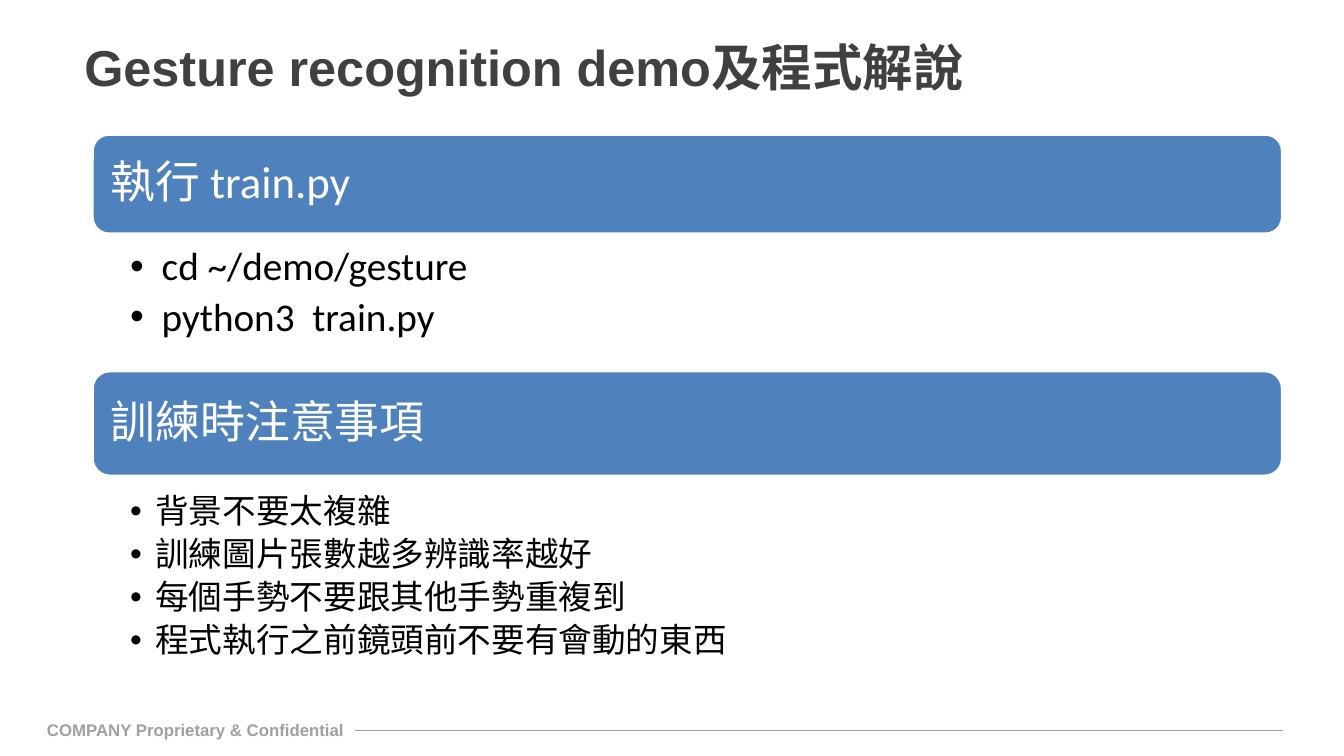
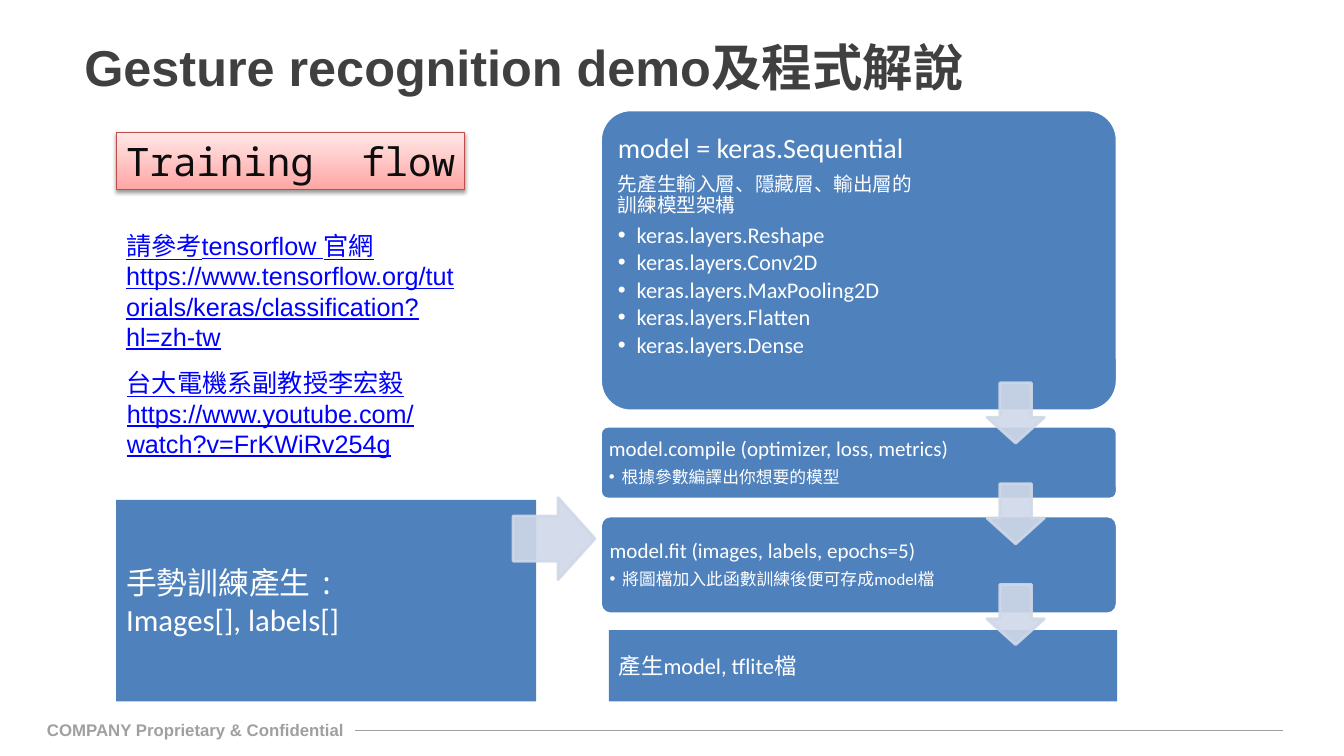
import pptx
import pptx.util
import pptx.dml.color
import pptx.enum.shapes
import pptx.enum.text
import pptx.oxml
import pptx.oxml.ns

Pt = pptx.util.Pt
SHAPE = pptx.enum.shapes.MSO_SHAPE
ANCHOR = pptx.enum.text.MSO_ANCHOR
ALIGN = pptx.enum.text.PP_ALIGN
NS = pptx.oxml.ns.nsdecls("a")

BLUE, PALE, WHITE, BLACK = "4F81BD", "D0D8E8", "FFFFFF", "000000"
GREY, DARK, LINK = "A0A0A0", "404040", "0000FF"
ARIAL, CALIBRI, MONO = "Arial", "Calibri", "Noto Sans Mono"

TITLE = "Gesture recognition demo及程式解說"
FOOTER = "COMPANY Proprietary & Confidential"

SECTIONS = [
    dict(head="執行 train.py", head_box=(66, 96, 850, 71), list_box=(66, 174, 850, 85),
         size=28, indent=22.5, items=["cd ~/demo/gesture", "python3  train.py"]),
    dict(head="訓練時注意事項", head_box=(66, 265, 850, 75), list_box=(66, 351, 850, 138),
         size=24, indent=18,
         items=["背景不要太複雜", "訓練圖片張數越多辨識率越好",
                "每個手勢不要跟其他手勢重複到", "程式執行之前鏡頭前不要有會動的東西"]),
]

LAYERS = ["Reshape", "Conv2D", "MaxPooling2D", "Flatten", "Dense"]
FLOW = [
    dict(top=78.5, height=215, insets=(6, 6, 130, 26), indent=13.5,
         heads=[("model = keras.Sequential", 20), ("先產生輸入層、隱藏層、輸出層的訓練模型架構", 14)],
         bullets=[("keras.layers." + name, 16) for name in LAYERS]),
    dict(top=304.5, height=52, insets=(4.5, 4, 4.5, 4), indent=9,
         heads=[("model.compile (optimizer, loss, metrics)", 15)],
         bullets=[("根據參數編譯出你想要的模型", 12)]),
    dict(top=368.5, height=70, insets=(4.5, 4, 4.5, 4), indent=9,
         heads=[("model.fit (images, labels, epochs=5)", 15)],
         bullets=[("將圖檔加入此函數訓練後便可存成model檔", 12)]),
]
PLAIN_BOXES = [
    ((83, 357, 300, 144), [("手勢訓練產生 :", 22, MONO), ("Images[], labels[]", 22, CALIBRI)]),
    ((435, 450, 363, 51), [("產生model, tflite檔", 16, CALIBRI)]),
]
ARROWS = [(SHAPE.DOWN_ARROW, (705, 273.5 + 72 * i, 41, 43)) for i in range(3)]
ARROWS.append((SHAPE.RIGHT_ARROW, (366.5, 355.5, 58.5, 58.5)))
LINKS = [
    ((83, 161, 249, 94),
     "請參考tensorflow 官網https://www.tensorflow.org/tutorials/keras/classification?hl=zh-tw"),
    ((83.5, 259, 238.5, 73), "台大電機系副教授李宏毅https://www.youtube.com/watch?v=FrKWiRv254g"),
]


def rgb(color):
    return pptx.dml.color.RGBColor.from_string(color)


def place(sp, box):
    sp.left, sp.top, sp.width, sp.height = map(Pt, box)


def frame(sp, insets=(7.2, 3.6, 7.2, 3.6), anchor=ANCHOR.MIDDLE):
    tf = sp.text_frame
    tf.word_wrap = True
    tf.auto_size = pptx.enum.text.MSO_AUTO_SIZE.NONE
    tf.vertical_anchor = anchor
    tf.margin_left, tf.margin_top, tf.margin_right, tf.margin_bottom = map(Pt, insets)
    return tf


def write(tf, text, size, font=CALIBRI, color=WHITE, bold=False, underline=False,
          spacing=None, after=0, indent=0, tab=0):
    p = tf.paragraphs[0]
    if p.runs:
        p = tf.add_paragraph()
    pPr = p._p.get_or_add_pPr()
    if indent:
        pPr.set("marL", str(Pt(indent)))
        pPr.set("indent", str(-Pt(indent)))
        pPr.append(pptx.oxml.parse_xml(f'<a:buFont {NS} typeface="Arial"/>'))
        pPr.append(pptx.oxml.parse_xml(f'<a:buChar {NS} char="•"/>'))
    if tab:
        pPr.append(pptx.oxml.parse_xml(
            f'<a:tabLst {NS}><a:tab pos="{Pt(tab)}" algn="l"/></a:tabLst>'))
    p.alignment = ALIGN.LEFT
    p.space_before = Pt(0)
    p.space_after = Pt(round(size * after, 1))
    if spacing:
        p.line_spacing = spacing
    r = p.add_run()
    r.text = text
    r.font.name, r.font.size = font, Pt(size)
    r.font.bold, r.font.underline = bold, underline
    r.font.color.rgb = rgb(color)


def add_shape(s, kind, box, fill=BLUE, line=None, width=2):
    sp = s.shapes.add_shape(kind, *map(Pt, box))
    sp.shadow.inherit = False
    sp.fill.solid()
    sp.fill.fore_color.rgb = rgb(fill)
    if line:
        sp.line.color.rgb = rgb(line)
        sp.line.width = Pt(width)
    else:
        sp.line.fill.background()
    return sp


def add_text(s, box, text, size, **style):
    sp = s.shapes.add_textbox(*map(Pt, box))
    write(frame(sp, anchor=ANCHOR.TOP), text, size, **style)
    return sp


def add_arrow(s, kind, box):
    sp = add_shape(s, kind, box, PALE, PALE)
    sp.adjustments[0], sp.adjustments[1] = 0.55, 0.45
    for clr in sp._element.spPr.iter(pptx.oxml.ns.qn("a:srgbClr")):
        clr.append(pptx.oxml.parse_xml(f'<a:alpha {NS} val="90000"/>'))


def add_slide(prs, layout):
    s = prs.slides.add_slide(prs.slide_layouts.get_by_name(layout))
    place(s.shapes.title, (53, 22, 870, 51))
    write(frame(s.shapes.title), TITLE, 36, font=ARIAL, color=DARK, bold=True)
    return s


def add_footer(prs, s):
    label = add_text(s, (26.5, 510.5, 227, 23), FOOTER, 12, font=ARIAL, color=GREY, bold=True)
    rule = s.shapes.add_connector(pptx.enum.shapes.MSO_CONNECTOR.STRAIGHT,
                                  Pt(253.5), Pt(522), Pt(916.5), Pt(522))
    rule.line.color.rgb = rgb(GREY)
    rule.line.width = Pt(1)
    rule._element.spPr.append(pptx.oxml.parse_xml(f"<a:effectLst {NS}/>"))
    for sp in (label, rule):
        prs.slide_master.shapes.element.append(sp._element)


def add_banner(s):
    sp = add_shape(s, SHAPE.RECTANGLE, (83, 94.5, 249, 41), line="BF4C48", width=0.75)
    sp.fill.gradient()
    sp.fill.gradient_angle = 90
    for stop, color in zip(sp.fill.gradient_stops, ("FFA6A5", "FFE7E7")):
        stop.color.rgb = rgb(color)
    sp._element.spPr.find(pptx.oxml.ns.qn("a:effectLst")).append(pptx.oxml.parse_xml(
        f'<a:outerShdw {NS} blurRad="{Pt(3.1)}" dist="{Pt(1.6)}" dir="5400000" rotWithShape="0">'
        f'<a:srgbClr val="{BLACK}"><a:alpha val="38000"/></a:srgbClr></a:outerShdw>'))
    tf = frame(sp, (7.2, 3.6, 3.6, 3.6), ANCHOR.TOP)
    write(tf, "Training\tflow", 28, font=MONO, color="0D0D0D", tab=168)


def build_notes(prs):
    s = add_slide(prs, "Two Content")
    bodies = [sp for sp in s.placeholders if sp.placeholder_format.idx > 0]
    for section, body in zip(SECTIONS, bodies):
        sp = add_shape(s, SHAPE.ROUNDED_RECTANGLE, section["head_box"], line=WHITE)
        write(frame(sp, (9.5, 6, 9.5, 6)), section["head"], 32, spacing=0.9)
        place(body, section["list_box"])
        tf = frame(body, (27, 2.5, 15, 2.5), ANCHOR.TOP)
        for item in section["items"]:
            write(tf, item, section["size"], color=BLACK, spacing=0.9, after=0.2,
                  indent=section["indent"])
    return s


def build_flow(prs):
    s = add_slide(prs, "Title Only")
    for step in FLOW:
        sp = add_shape(s, SHAPE.ROUNDED_RECTANGLE, (429, step["top"], 369, step["height"]),
                       line=WHITE)
        sp.adjustments[0] = 0.1
        tf = frame(sp, step["insets"])
        for text, size in step["heads"]:
            write(tf, text, size, spacing=0.9, after=0.35)
        for text, size in step["bullets"]:
            write(tf, text, size, spacing=0.9, after=0.15, indent=step["indent"])
    for box, lines in PLAIN_BOXES:
        tf = frame(add_shape(s, SHAPE.RECTANGLE, box))
        for text, size, font in lines:
            write(tf, text, size, font=font)
    for kind, box in ARROWS:
        add_arrow(s, kind, box)
    add_banner(s)
    for box, text in LINKS:
        add_text(s, box, text, 18, font=ARIAL, color=LINK, underline=True)


def main():
    prs = pptx.Presentation()
    prs.slide_width, prs.slide_height = Pt(960), Pt(540)
    s = build_notes(prs)
    add_footer(prs, s)
    build_flow(prs)
    prs.save("out.pptx")


if __name__ == "__main__":
    main()
